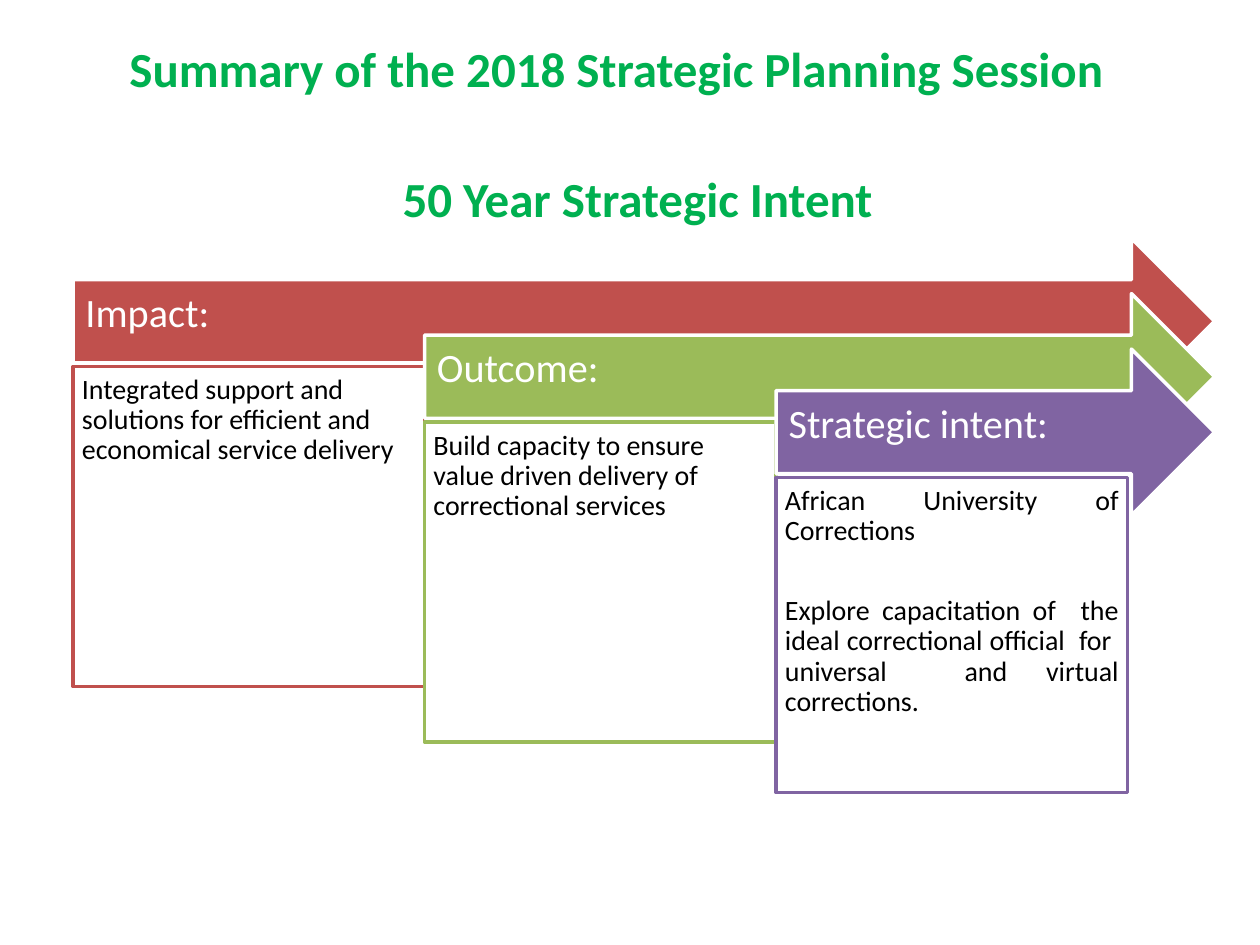
import pptx
import pptx.util
import pptx.dml.color
import pptx.enum.shapes
import pptx.enum.text

Inches = pptx.util.Inches
Pt = pptx.util.Pt
SHAPES = pptx.enum.shapes.MSO_SHAPE
ALIGN = pptx.enum.text.PP_ALIGN
ANCHOR = pptx.enum.text.MSO_ANCHOR

HEADING_FONT = {"name": "Calibri", "size": Pt(28), "bold": True}
LABEL_FONT = {"name": "Calibri", "size": Pt(23)}
DETAIL_FONT = {"name": "Calibri", "size": Pt(16)}

HEADING_FRAME = {"word_wrap": True, "vertical_anchor": ANCHOR.MIDDLE}
LABEL_FRAME = {
    "word_wrap": True,
    "vertical_anchor": ANCHOR.MIDDLE,
    "margin_left": Inches(0.1),
    "margin_top": Inches(0.1),
    "margin_right": Inches(0.28),
    "margin_bottom": Inches(0.21),
}
DETAIL_FRAME = {
    "word_wrap": True,
    "vertical_anchor": ANCHOR.TOP,
    "margin_left": Inches(0.07),
    "margin_top": Inches(0.07),
    "margin_right": Inches(0.07),
    "margin_bottom": Inches(0.07),
}

STAGES = [
    ("Impact:", "C0504D", 2.54, ALIGN.LEFT,
     ["Integrated support and solutions for efficient and economical service delivery"]),
    ("Outcome:", "9BBB59", 2.54, ALIGN.LEFT,
     ["Build capacity to ensure value driven delivery of correctional services"]),
    ("Strategic intent:", "8064A2", 2.5, ALIGN.JUSTIFY,
     ["African University of Corrections",
      "Explore capacitation of  the ideal correctional official  for  universal  and virtual corrections."]),
]


def rgb(code):
    return pptx.dml.color.RGBColor.from_string(code)


def apply(target, values):
    for attribute, value in values.items():
        setattr(target, attribute, value)


def write(frame, lines, frame_format, font_format, color, paragraph_format, gap=0):
    apply(frame, frame_format)
    for index, line in enumerate(lines):
        paragraph = frame.paragraphs[0] if index == 0 else frame.add_paragraph()
        paragraph.text = line
        apply(paragraph, paragraph_format)
        if index:
            paragraph.space_before = Pt(gap)
        apply(paragraph.font, font_format)
        paragraph.font.color.rgb = rgb(color)


def add_block(slide, preset, box, fill, line):
    block = slide.shapes.add_shape(preset, *map(Inches, box))
    block.shadow.inherit = False
    block.fill.solid()
    block.fill.fore_color.rgb = rgb(fill)
    block.line.color.rgb = rgb(line)
    block.line.width = Pt(2)
    return block


def place_heading(heading, text, box):
    apply(heading, dict(zip(("left", "top", "width", "height"), map(Inches, box))))
    write(heading.text_frame, [text], HEADING_FRAME, HEADING_FONT, "00B050",
          {"alignment": ALIGN.CENTER})


def add_stage(slide, box, detail_width, stage):
    label, color, detail_height, alignment, details = stage
    left, top, width, height = box
    arrow = add_block(slide, SHAPES.RIGHT_ARROW, box, color, "FFFFFF")
    write(arrow.text_frame, [label], LABEL_FRAME, LABEL_FONT, "FFFFFF",
          {"alignment": ALIGN.LEFT, "line_spacing": 0.9})
    detail_box = (left, top + 1.02, detail_width, detail_height)
    detail = add_block(slide, SHAPES.RECTANGLE, detail_box, "FFFFFF", color)
    write(detail.text_frame, details, DETAIL_FRAME, DETAIL_FONT, "000000",
          {"alignment": alignment, "line_spacing": 0.9}, gap=28.4)


def add_cascade(slide, box):
    left, top, width, arrow_height = box
    column, drop = 2.79, 0.44
    for index, stage in enumerate(STAGES):
        shift = index * column
        arrow_box = (left + shift, top + index * drop, width - shift, arrow_height)
        add_stage(slide, arrow_box, column, stage)


def main():
    deck = pptx.Presentation()
    deck.slide_width, deck.slide_height = Inches(10), Inches(7.5)
    slide = deck.slides.add_slide(deck.slide_layouts[5])
    place_heading(slide.shapes.title, "Summary of the 2018 Strategic Planning Session",
                  (0.39, 0.12, 9, 0.84))
    add_cascade(slide, (0.58, 1.89, 9.06, 1.32))
    subtitle = slide.shapes.add_textbox(0, 0, 0, 0)
    place_heading(subtitle, "50 Year Strategic Intent", (0.56, 1.15, 9, 0.84))
    deck.save("out.pptx")


if __name__ == "__main__":
    main()
